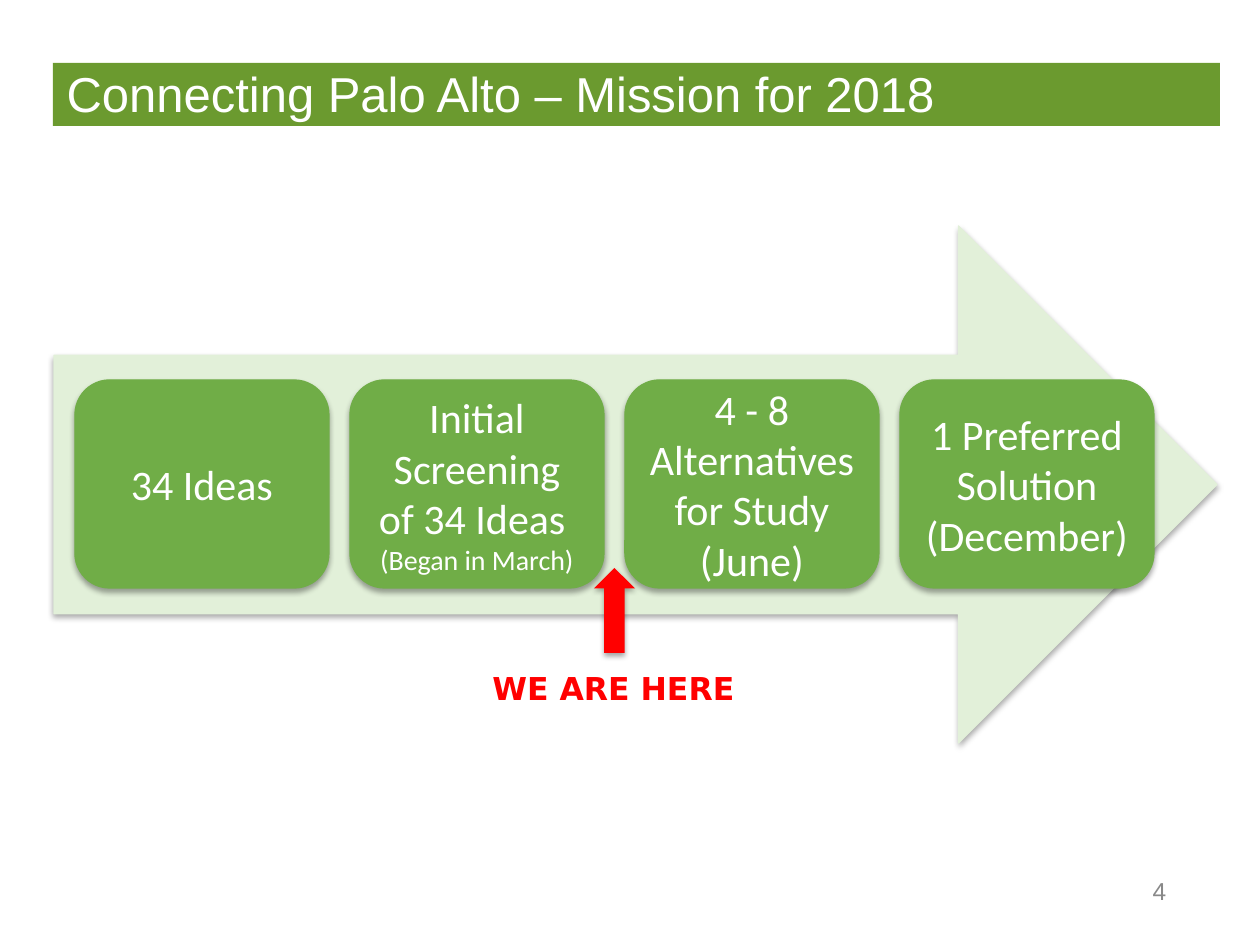
import pptx
import pptx.dml.color
import pptx.enum.shapes
import pptx.enum.text
import pptx.oxml
import pptx.oxml.ns
import pptx.util
from dataclasses import dataclass

SCALE = 914400 / 126
FORM = pptx.enum.shapes.MSO_SHAPE
ALIGN = pptx.enum.text.PP_ALIGN
MID = pptx.enum.text.MSO_ANCHOR.MIDDLE
TOP = pptx.enum.text.MSO_ANCHOR.TOP


@dataclass(frozen=True)
class Theme:
    bar: str = "6B9A2F"
    pale: str = "E2F0D9"
    green: str = "70AD47"
    red: str = "FF0000"
    white: str = "FFFFFF"
    gray: str = "898989"
    head: int = 28
    step: int = 24
    note: int = 16
    mark: int = 18
    page: int = 14


LOOK = Theme()


def px(num):
    return pptx.util.Emu(round(num * SCALE))


def tint(code):
    return pptx.dml.color.RGBColor.from_string(code)


def write(frame, *lines, sizes, face, color, bold=False, align=ALIGN.LEFT, anchor=MID):
    frame.word_wrap = True
    frame.auto_size = pptx.enum.text.MSO_AUTO_SIZE.NONE
    frame.vertical_anchor = anchor
    for num, (line, size) in enumerate(zip(lines, sizes)):
        para = frame.paragraphs[0] if num == 0 else frame.add_paragraph()
        para.alignment = align
        run = para.add_run()
        run.text = line
        run.font.size = pptx.util.Pt(size)
        run.font.name = face
        run.font.bold = bold
        run.font.color.rgb = tint(color)


def shade(shape):
    glow = pptx.oxml.parse_xml(
        f'<a:effectLst {pptx.oxml.ns.nsdecls("a")}>'
        '<a:outerShdw blurRad="39370" dist="22860" dir="5400000" rotWithShape="0">'
        '<a:srgbClr val="000000"><a:alpha val="35000"/></a:srgbClr>'
        '</a:outerShdw></a:effectLst>')
    props = shape.element.spPr
    for old in props.findall(pptx.oxml.ns.qn("a:effectLst")):
        props.remove(old)
    props.append(glow)


def block(slide, form, area, fill, line=None, deep=True):
    shape = slide.shapes.add_shape(form, *map(px, area))
    shape.fill.solid()
    shape.fill.fore_color.rgb = tint(fill)
    if line:
        shape.line.color.rgb = tint(line)
        shape.line.width = pptx.util.Pt(0.75)
    else:
        shape.line.fill.background()
    shape.shadow.inherit = False
    if deep:
        shade(shape)
    return shape


def label(slide, area, text, **style):
    box = slide.shapes.add_textbox(*map(px, area))
    write(box.text_frame, text, **style)


def header(slide, text):
    block(slide, FORM.RECTANGLE, (53, 63, 1167, 63), LOOK.bar, deep=False)
    title = slide.shapes.title
    title.left, title.top, title.width, title.height = map(px, (54, 64, 995, 57))
    write(title.text_frame, text, sizes=[LOOK.head], face="Arial", color=LOOK.white)
    slide.shapes.element.append(title.element)


def steps(slide, items):
    for num, lines in enumerate(items):
        area = (75 + 275 * num, 380, 254, 208)
        shape = block(slide, FORM.ROUNDED_RECTANGLE, area, LOOK.green, LOOK.green)
        write(shape.text_frame, *lines, sizes=[LOOK.step, LOOK.note],
              face="Calibri", color=LOOK.white, align=ALIGN.CENTER)


def main():
    deck = pptx.Presentation()
    deck.slide_width, deck.slide_height = px(1260), px(945)
    slide = deck.slides.add_slide(deck.slide_layouts[5])
    header(slide, "Connecting Palo Alto – Mission for 2018")
    block(slide, FORM.RIGHT_ARROW, (54, 226, 1163, 517), LOOK.pale, LOOK.pale)
    steps(slide, [
        ["34 Ideas"],
        ["Initial Screening of 34 Ideas ", "(Began in March)"],
        ["4 - 8 Alternatives for Study (June)"],
        ["1 Preferred Solution (December)"],
    ])
    block(slide, FORM.UP_ARROW, (594, 568, 41, 85), LOOK.red)
    label(slide, (480, 663, 270, 50), "WE ARE HERE", sizes=[LOOK.mark],
          face="DejaVu Sans", color=LOOK.red, bold=True, anchor=TOP)
    label(slide, (1097, 872, 125, 38), "4", sizes=[LOOK.page],
          face="Arial", color=LOOK.gray, align=ALIGN.CENTER)
    deck.save("out.pptx")


if __name__ == "__main__":
    main()
